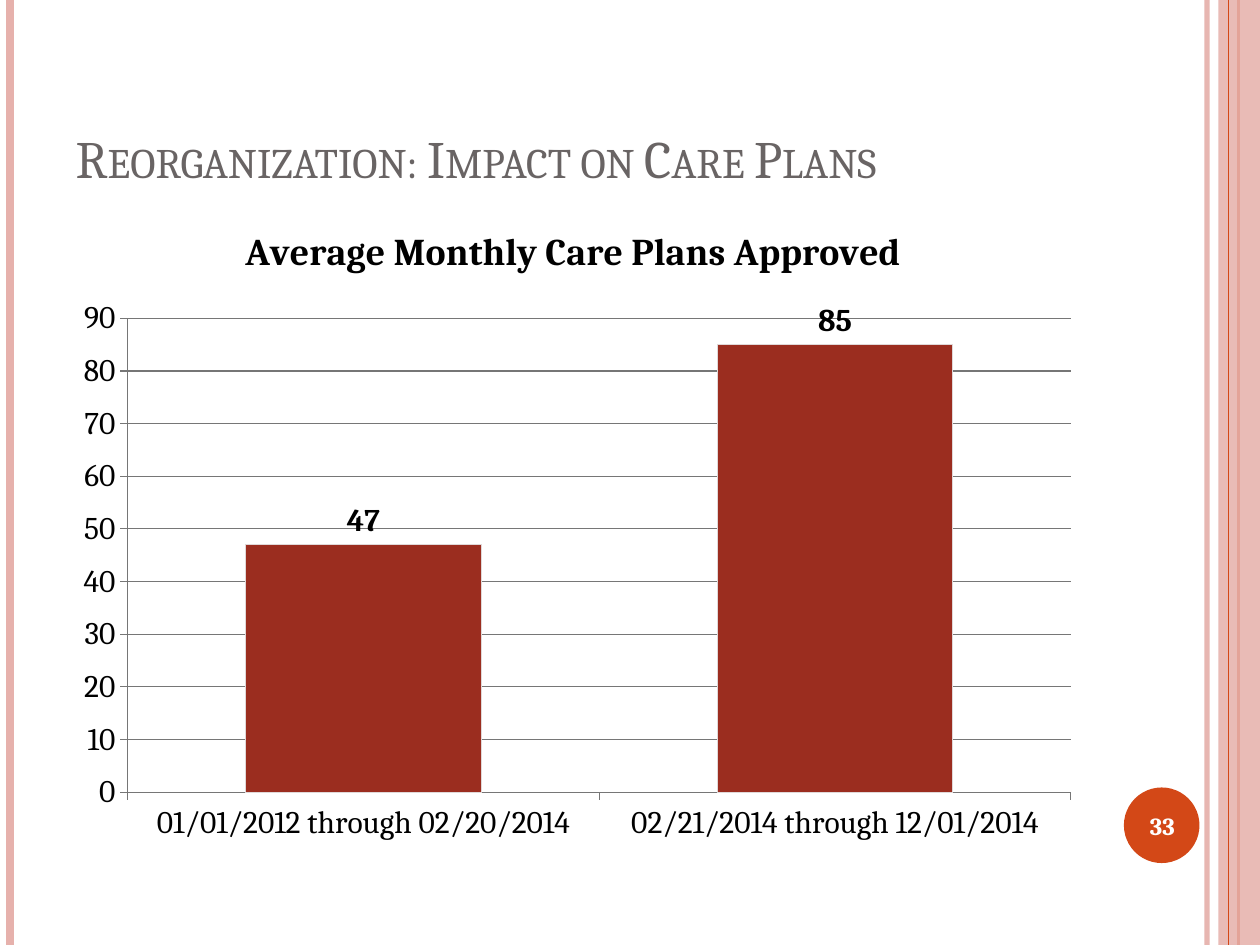
from dataclasses import dataclass

from lxml import etree
from pptx import Presentation
from pptx.chart.data import CategoryChartData
from pptx.dml.color import RGBColor
from pptx.enum.chart import XL_CHART_TYPE, XL_LABEL_POSITION, XL_TICK_MARK
from pptx.enum.shapes import MSO_CONNECTOR, MSO_SHAPE
from pptx.enum.text import MSO_ANCHOR, PP_ALIGN
from pptx.oxml import parse_xml
from pptx.oxml.ns import nsdecls, qn
from pptx.util import Inches, Pt

COLUMN = XL_CHART_TYPE.COLUMN_CLUSTERED
OUTSIDE_END = XL_LABEL_POSITION.OUTSIDE_END
TICK_OUTSIDE = XL_TICK_MARK.OUTSIDE
STRAIGHT = MSO_CONNECTOR.STRAIGHT
RECTANGLE = MSO_SHAPE.RECTANGLE
OVAL = MSO_SHAPE.OVAL
BOTTOM, MIDDLE = MSO_ANCHOR.BOTTOM, MSO_ANCHOR.MIDDLE
LEFT, CENTER = PP_ALIGN.LEFT, PP_ALIGN.CENTER


@dataclass(frozen=True)
class Theme:
    font: str = "Cambria"
    title: str = "696464"
    text: str = "000000"
    white: str = "FFFFFF"
    accent: str = "D34817"
    pink: str = "E6B1AC"
    bar: str = "9B2D1F"
    bar_edge: str = "E0D8D8"
    grid: str = "767676"
    title_size: float = 30
    chart_title_size: float = 21.6
    chart_size: float = 18
    number_size: float = 14


THEME = Theme()


def color(value):
    return RGBColor.from_string(value)


def set_alpha(element, percent):
    color_element = next(element.iter(qn("a:srgbClr")))
    etree.SubElement(color_element, qn("a:alpha")).set("val", str(percent * 1000))


def format_font(font, size, value, bold=False):
    font.name = THEME.font
    font.size = Pt(size)
    font.bold = bold
    font.color.rgb = color(value)


def write_text(frame, text, size, value, bold=False, align=LEFT,
               anchor=MIDDLE, small_caps=False):
    frame.word_wrap = True
    frame.vertical_anchor = anchor
    paragraph = frame.paragraphs[0]
    paragraph.alignment = align
    run = paragraph.add_run()
    run.text = text
    format_font(run.font, size, value, bold)
    if small_caps:
        run._r.get_or_add_rPr().set("cap", "small")


def add_filled_shape(slide, kind, box, value, alpha=100):
    shape = slide.shapes.add_shape(kind, *map(Inches, box))
    shape.shadow.inherit = False
    shape.fill.solid()
    shape.fill.fore_color.rgb = color(value)
    shape.line.fill.background()
    if alpha < 100:
        set_alpha(shape._element.spPr, alpha)


def add_vertical_line(slide, x, height, value, width, alpha=100):
    line = slide.shapes.add_connector(STRAIGHT, Inches(x), 0, Inches(x), Inches(height))
    line.line.color.rgb = color(value)
    line.line.width = Pt(width)
    properties = line._element.spPr
    if alpha < 100:
        set_alpha(properties, alpha)
    etree.SubElement(properties, qn("a:effectLst"))


def add_side_bands(slide, box):
    left, top, width, height = box
    right = left + width
    add_vertical_line(slide, right - 0.42, height, THEME.pink, 3, alpha=93)
    add_vertical_line(slide, left + 0.08, height, THEME.pink, 4.5)
    add_vertical_line(slide, right - 0.17, height, THEME.accent, 1.5)
    add_filled_shape(slide, RECTANGLE, (right - 0.33, top, 0.33, height), THEME.pink, alpha=87)
    add_vertical_line(slide, right - 0.25, height, THEME.accent, 0.75)


def add_title(slide, box, text):
    title = slide.shapes.title
    title.left, title.top, title.width, title.height = map(Inches, box)
    write_text(title.text_frame, text, THEME.title_size, THEME.title,
               anchor=BOTTOM, small_caps=True)


def add_page_number(slide, box, text):
    left, top, width, height = box
    add_filled_shape(slide, OVAL, box, THEME.accent)
    number = slide.shapes.add_textbox(
        Inches(left - 0.03), Inches(top + 0.02), Inches(width + 0.07), Inches(height - 0.03))
    write_text(number.text_frame, text, THEME.number_size, THEME.white,
               bold=True, align=CENTER)


def set_plot_layout(chart, x, y, width, height):
    plot_area = chart._chartSpace.chart.plotArea
    for layout in plot_area.findall(qn("c:layout")):
        plot_area.remove(layout)
    plot_area.insert(0, parse_xml(
        f'<c:layout {nsdecls("c")}><c:manualLayout><c:layoutTarget val="inner"/>'
        '<c:xMode val="edge"/><c:yMode val="edge"/>'
        f'<c:x val="{x}"/><c:y val="{y}"/><c:w val="{width}"/><c:h val="{height}"/>'
        '</c:manualLayout></c:layout>'))


def add_care_plan_chart(slide, box, name, averages):
    data = CategoryChartData()
    data.categories = list(averages)
    data.add_series(name, list(averages.values()))
    chart = slide.shapes.add_chart(COLUMN, *map(Inches, box), data).chart
    format_font(chart.font, THEME.chart_size, THEME.text)
    chart.has_legend = False
    chart.has_title = True
    write_text(chart.chart_title.text_frame, name, THEME.chart_title_size,
               THEME.text, bold=True, align=CENTER)
    chart.chart_title.include_in_layout = False
    set_plot_layout(chart, 0.063, 0.172, 0.916, 0.684)

    for axis in (chart.category_axis, chart.value_axis):
        axis.major_tick_mark = TICK_OUTSIDE
        axis.format.line.color.rgb = color(THEME.grid)
    value_axis = chart.value_axis
    value_axis.minimum_scale, value_axis.maximum_scale, value_axis.major_unit = 0, 90, 10
    value_axis.has_major_gridlines = True
    value_axis.major_gridlines.format.line.color.rgb = color(THEME.grid)

    plot = chart.plots[0]
    plot.gap_width = 100
    plot.vary_by_categories = False
    series = plot.series[0]
    series.format.fill.solid()
    series.format.fill.fore_color.rgb = color(THEME.bar)
    series.format.line.color.rgb = color(THEME.bar_edge)
    labels = series.data_labels
    labels.show_value = True
    labels.position = OUTSIDE_END
    format_font(labels.font, THEME.chart_size, THEME.text, bold=True)


def main():
    presentation = Presentation()
    presentation.slide_width = Inches(10)
    presentation.slide_height = Inches(7.5)
    slide = presentation.slides.add_slide(presentation.slide_layouts[5])
    add_side_bands(slide, (0, 0, 10, 7.5))
    add_title(slide, (0.5, 0.3, 8.17, 1.25), "Reorganization: Impact on Care Plans")
    add_care_plan_chart(
        slide, (0.5, 1.58, 8.17, 5.5), "Average Monthly Care Plans Approved ",
        {"01/01/2012 through 02/20/2014": 47, "02/21/2014 through 12/01/2014": 85})
    add_page_number(slide, (8.92, 6.25, 0.6, 0.6), "33")
    presentation.save("out.pptx")


if __name__ == "__main__":
    main()
